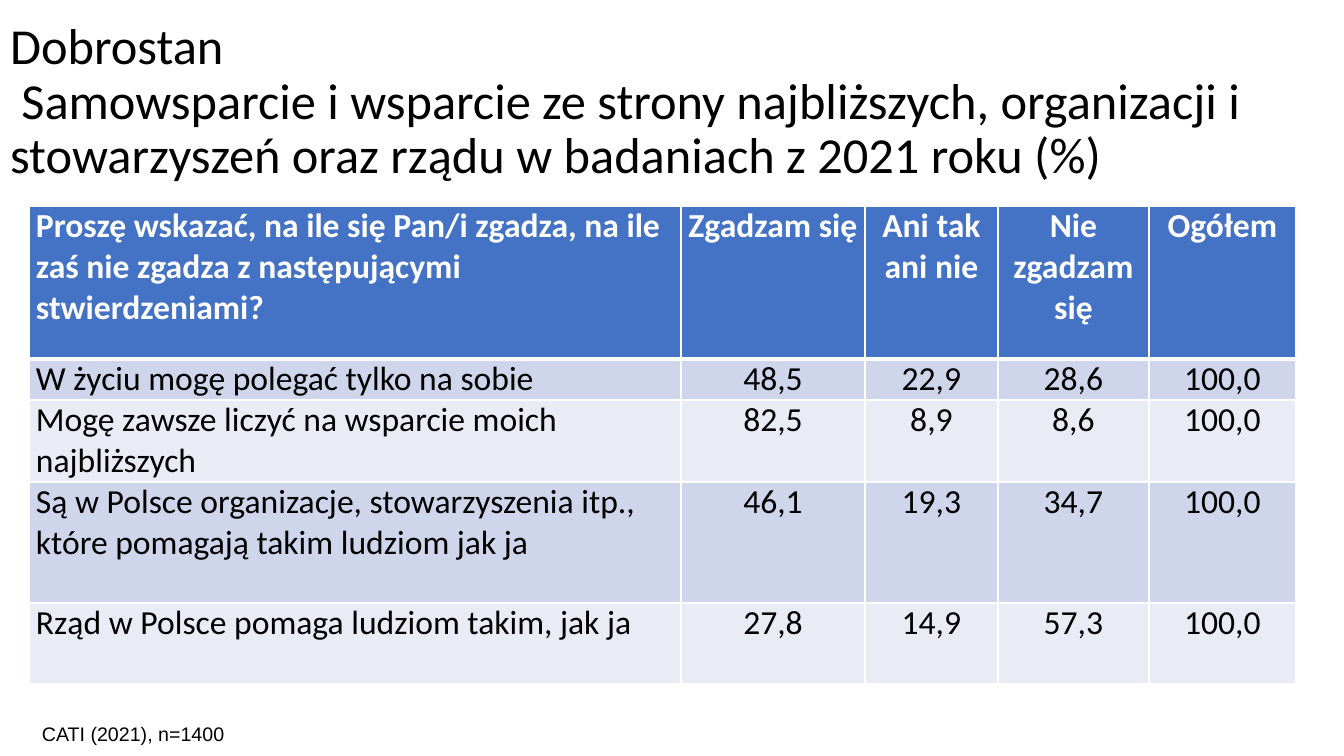
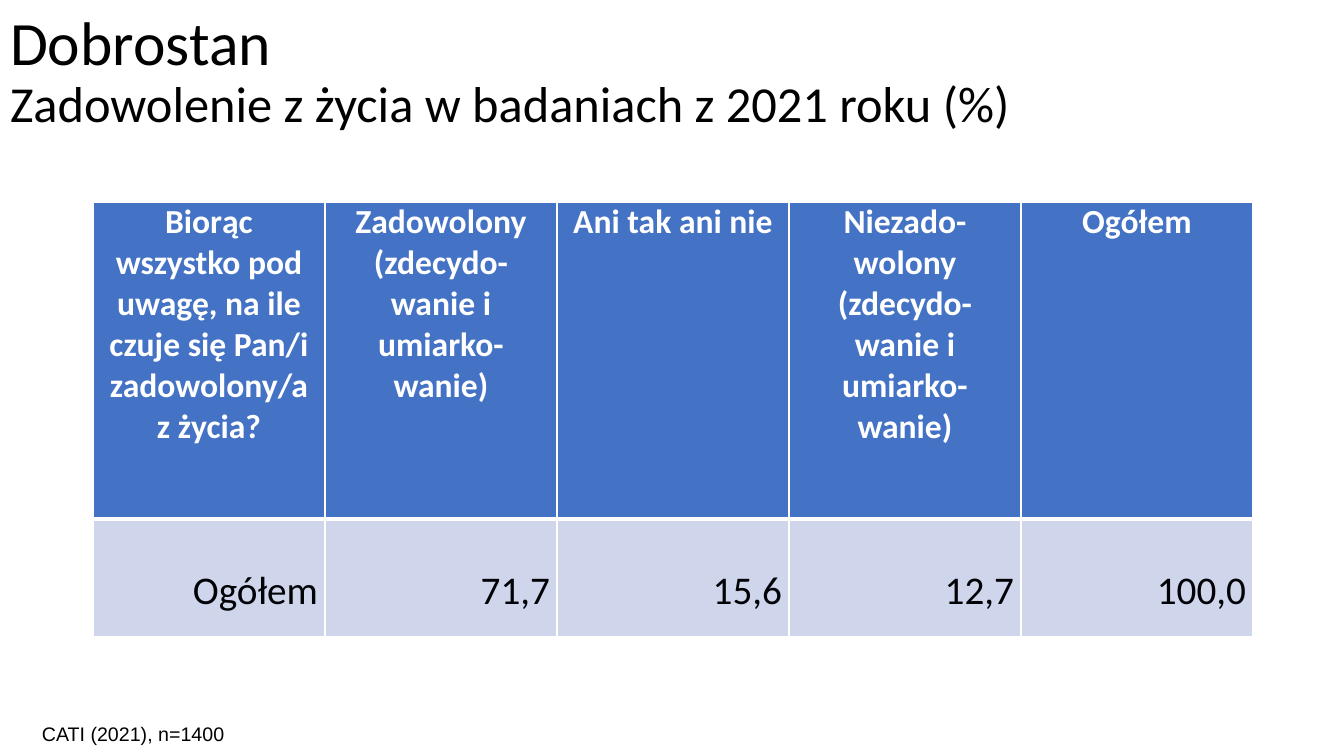
from lxml import etree
from pptx import Presentation
from pptx import util as u
from pptx.dml.color import RGBColor
from pptx.enum import text
from pptx.oxml.ns import qn

SLIDE_WIDTH, SLIDE_HEIGHT = 1344, 756
EMU_PER_PX = 12192000 / SLIDE_WIDTH

WHITE, BLACK, INK = "FFFFFF", "000000", "010205"
HEADER_FILL = "4472C4"
BAND_FILLS = ("CFD5EA", "E9EBF5")
TITLE_FONT, NOTE_FONT = "Calibri", "Arial"
LEFT, CENTER, RIGHT = text.PP_ALIGN.LEFT, text.PP_ALIGN.CENTER, text.PP_ALIGN.RIGHT

NOTE = "CATI (2021), n=1400"
NOTE_BOX = (32, 712, 504, 44)

SLIDES = [
    {
        "title": [
            ("Dobrostan", 36),
            (" Samowsparcie i wsparcie ze strony najbliższych, organizacji i "
             "stowarzyszeń oraz rządu w badaniach z 2021 roku (%)", 36),
        ],
        "title_box": (0, 30, 1257, 146),
        "origin": (29, 206),
        "columns": [652, 184, 133, 151, 147],
        "heights": [153, 41, 82, 121, 81],
        "first_align": LEFT, "header_align": CENTER, "body_align": CENTER,
        "body_size": 24, "body_color": BLACK, "body_top": 0,
        "rows": [
            ["Proszę wskazać, na ile się Pan/i zgadza, na ile zaś nie zgadza "
             "z następującymi stwierdzeniami?",
             "Zgadzam się", "Ani tak ani nie", "Nie zgadzam się", "Ogółem"],
            ["W życiu mogę polegać tylko na sobie", "48,5", "22,9", "28,6", "100,0"],
            ["Mogę zawsze liczyć na wsparcie moich najbliższych",
             "82,5", "8,9", "8,6", "100,0"],
            ["Są w Polsce organizacje, stowarzyszenia itp., które pomagają "
             "takim ludziom jak ja", "46,1", "19,3", "34,7", "100,0"],
            ["Rząd w Polsce pomaga ludziom takim, jak ja",
             "27,8", "14,9", "57,3", "100,0"],
        ],
    },
    {
        "title": [
            ("Dobrostan", 44),
            ("Zadowolenie z życia w badaniach z 2021 roku (%)", 36),
        ],
        "title_box": (0, 0, 1159, 146),
        "origin": (93, 202),
        "columns": [232] * 5,
        "heights": [317, 118],
        "first_align": None, "header_align": CENTER, "body_align": RIGHT,
        "body_size": 28, "body_color": INK, "body_top": 48,
        "rows": [
            ["Biorąc wszystko pod uwagę, na ile czuje się Pan/i zadowolony/a z życia?",
             "Zadowolony (zdecydo-wanie i umiarko-wanie)", "Ani tak ani nie",
             "Niezado- wolony\n(zdecydo-wanie i umiarko-wanie)", "Ogółem"],
            ["Ogółem", "71,7", "15,6", "12,7", "100,0"],
        ],
    },
]


def px(length):
    return u.Emu(round(length * EMU_PER_PX))


def box(*lengths):
    return [px(length) for length in lengths]


def color(value):
    return RGBColor.from_string(value)


def format_paragraph(paragraph, font_name, size, font_color, align=LEFT, bold=False):
    paragraph.alignment = align
    font = paragraph.font
    font.name, font.size, font.bold = font_name, u.Pt(size), bold
    font.color.rgb = color(font_color)


def add_title(slide, lines, title_box):
    title = slide.shapes.title
    title.left, title.top, title.width, title.height = box(*title_box)
    frame = title.text_frame
    frame.auto_size = text.MSO_AUTO_SIZE.NONE
    frame.vertical_anchor = text.MSO_ANCHOR.MIDDLE
    frame.text = "\n".join(line for line, size in lines)
    for paragraph, (line, size) in zip(frame.paragraphs, lines):
        format_paragraph(paragraph, TITLE_FONT, size, BLACK)
        paragraph.line_spacing = 0.9


def add_borders(cell, widths):
    """Draw white cell borders; widths are points keyed by side (L, R, T, B)."""
    properties = cell._tc.get_or_add_tcPr()
    for side, width in widths.items():
        line = etree.SubElement(properties, qn(f"a:ln{side}"), w=str(u.Pt(width)))
        fill = etree.SubElement(line, qn("a:solidFill"))
        etree.SubElement(fill, qn("a:srgbClr"), val=WHITE)


def add_survey_table(slide, content):
    rows, columns, heights = content["rows"], content["columns"], content["heights"]
    frame = slide.shapes.add_table(
        len(rows), len(columns),
        *box(*content["origin"], sum(columns), sum(heights)))
    table = frame.table
    table.horz_banding = False
    for column, width in zip(table.columns, columns):
        column.width = px(width)
    for row, height in zip(table.rows, heights):
        row.height = px(height)

    for i, values in enumerate(rows):
        header = i == 0
        fill = HEADER_FILL if header else BAND_FILLS[(i - 1) % 2]
        row_align = content["header_align" if header else "body_align"]
        size = 24 if header else content["body_size"]
        font_color = WHITE if header else content["body_color"]
        for j, value in enumerate(values):
            cell = table.cell(i, j)
            add_borders(cell, {"L": 1, "R": 1, "T": 3 if i == 1 else 1,
                               "B": 3 if header else 1})
            cell.fill.solid()
            cell.fill.fore_color.rgb = color(fill)
            cell.margin_left = cell.margin_right = px(7)
            cell.margin_top = px(0 if header else content["body_top"])
            cell.margin_bottom = 0
            cell.text = value
            align = content["first_align"] if j == 0 else None
            for paragraph in cell.text_frame.paragraphs:
                format_paragraph(paragraph, TITLE_FONT, size, font_color,
                                 align or row_align, header)


def add_note(slide):
    frame = slide.shapes.add_textbox(*box(*NOTE_BOX)).text_frame
    frame.word_wrap = True
    frame.vertical_anchor = text.MSO_ANCHOR.MIDDLE
    frame.text = NOTE
    format_paragraph(frame.paragraphs[0], NOTE_FONT, 14, BLACK)


def main():
    presentation = Presentation()
    presentation.slide_width, presentation.slide_height = box(SLIDE_WIDTH, SLIDE_HEIGHT)
    title_only = presentation.slide_layouts[5]
    for content in SLIDES:
        slide = presentation.slides.add_slide(title_only)
        add_title(slide, content["title"], content["title_box"])
        add_survey_table(slide, content)
        add_note(slide)
    presentation.save("out.pptx")


if __name__ == "__main__":
    main()
